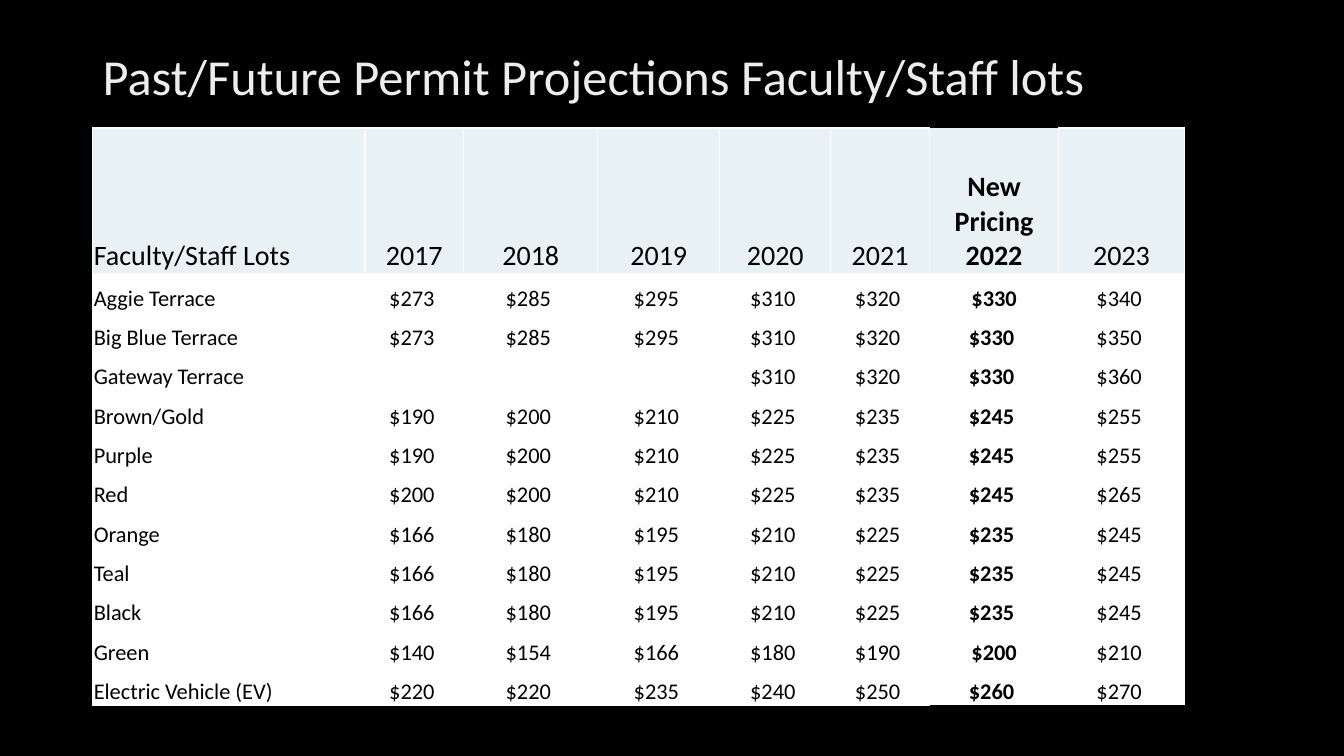
from typing import Any, NamedTuple

from lxml.etree import SubElement
from pptx import Presentation
from pptx.dml.color import RGBColor
from pptx.enum.text import MSO_ANCHOR as ANCHOR, PP_ALIGN as ALIGN
from pptx.oxml import parse_xml
from pptx.oxml.ns import nsdecls, qn
from pptx.util import Inches, Pt

FONT = "Calibri"
BLACK, WHITE, HEADER_FILL = "000000", "FFFFFF", "E8F2F4"
TITLE_STOPS = [(0, "BFBFBF"), (28, "EDEDED"), (100, "FFFFFF")]
TITLE_ANGLE = 80
NO_STYLE_NO_GRID = "{2D5ABB26-0587-4C30-8999-92F81FD0307C}"
CELL_FORMAT = {
    "margin_left": Inches(0.01), "margin_right": Inches(0.01),
    "margin_top": Inches(0.01), "margin_bottom": 0,
    "vertical_anchor": ANCHOR.BOTTOM,
}


class Column(NamedTuple):
    heading: str
    width: float
    bold: bool = False


class Lot(NamedTuple):
    name: str
    prices: list[int | None]


COLUMNS = [
    Column("Faculty/Staff Lots", 2.7),
    Column("2017", 0.98),
    Column("2018", 1.33),
    Column("2019", 1.21),
    Column("2020", 1.1),
    Column("2021", 0.98),
    Column("New Pricing\n2022", 1.28, bold=True),
    Column("2023", 1.25),
]
LOTS = [
    Lot("Aggie Terrace", [273, 285, 295, 310, 320, 330, 340]),
    Lot("Big Blue Terrace", [273, 285, 295, 310, 320, 330, 350]),
    Lot("Gateway Terrace", [None, None, None, 310, 320, 330, 360]),
    Lot("Brown/Gold", [190, 200, 210, 225, 235, 245, 255]),
    Lot("Purple", [190, 200, 210, 225, 235, 245, 255]),
    Lot("Red", [200, 200, 210, 225, 235, 245, 265]),
    Lot("Orange", [166, 180, 195, 210, 225, 235, 245]),
    Lot("Teal", [166, 180, 195, 210, 225, 235, 245]),
    Lot("Black", [166, 180, 195, 210, 225, 235, 245]),
    Lot("Green", [140, 154, 166, 180, 190, 200, 210]),
    Lot("Electric Vehicle (EV)", [220, 220, 235, 240, 250, 260, 270]),
]
NEW_PRICING, LAST_YEAR = 6, 7
UNPADDED = {("Aggie Terrace", NEW_PRICING), ("Green", NEW_PRICING)}


def rgb(value: str) -> RGBColor:
    return RGBColor.from_string(value)


def set_attrs(target: Any, values: dict[str, Any]) -> None:
    for name, value in values.items():
        setattr(target, name, value)


def add_title(slide: Any, text: str) -> None:
    sp = slide.shapes.add_textbox(Inches(0.92), Inches(0.4), Inches(11.5), Inches(0.77))
    tf = sp.text_frame
    set_attrs(tf, {"word_wrap": True, "vertical_anchor": ANCHOR.MIDDLE})
    p = tf.paragraphs[0]
    p.line_spacing = 0.9
    r = p.add_run()
    r.text = text
    set_attrs(r.font, {"size": Pt(36), "name": FONT})
    stops = "".join(
        f'<a:gs pos="{pos * 1000}"><a:srgbClr val="{color}"/></a:gs>'
        for pos, color in TITLE_STOPS
    )
    r.font._element.insert(0, parse_xml(
        f'<a:gradFill {nsdecls("a")}><a:gsLst>{stops}</a:gsLst>'
        f'<a:lin ang="{TITLE_ANGLE * 60000}" scaled="0"/></a:gradFill>'
    ))


def border_sides(row: int, col: int) -> str:
    """Sides with a white line; the last two columns are open lower down."""
    if col == NEW_PRICING:
        return "LRB" if row == 0 else "LRTB" if row < 4 else "LT" if row == 4 else "L"
    if col == LAST_YEAR and row > 0:
        return "LT" if row == 1 else "L" if row < 4 else ""
    return "LRTB"


def add_borders(cell: Any, sides: str) -> None:
    tc_pr = cell._tc.get_or_add_tcPr()
    for side in sides:
        ln = SubElement(tc_pr, qn(f"a:ln{side}"), w=str(Pt(1)))
        fill = SubElement(ln, qn("a:solidFill"))
        SubElement(fill, qn("a:srgbClr"), val=WHITE)


def fill_cell(cell: Any, text: str, row: int, col: int) -> None:
    set_attrs(cell, CELL_FORMAT)
    add_borders(cell, border_sides(row, col))
    cell.fill.solid()
    cell.fill.fore_color.rgb = rgb(WHITE if row else HEADER_FILL)
    cell.text = text
    for p in cell.text_frame.paragraphs:
        p.alignment = ALIGN.CENTER if col else ALIGN.LEFT
        for r in p.runs:
            set_attrs(r.font, {
                "size": Pt(16 if row else 20),
                "name": FONT,
                "bold": COLUMNS[col].bold,
            })
            r.font.color.rgb = rgb(BLACK)


def price_text(lot: Lot, col: int) -> str:
    price = lot.prices[col - 1]
    if price is None:
        return ""
    return f"${price}" if (lot.name, col) in UNPADDED else f"${price} "


def add_price_table(slide: Any) -> None:
    rows = [[c.heading for c in COLUMNS]]
    rows += [[lot.name] + [price_text(lot, col) for col in range(1, len(COLUMNS))]
             for lot in LOTS]
    frame = slide.shapes.add_table(len(rows), len(COLUMNS), Inches(0.92), Inches(1.27),
                                   Inches(10.84), Inches(5.77))
    table = frame.table
    set_attrs(table, {"first_row": False, "horz_banding": False})
    table._tbl.tblPr.find(qn("a:tableStyleId")).text = NO_STYLE_NO_GRID
    for col, column in enumerate(COLUMNS):
        table.columns[col].width = Inches(column.width)
    for row, texts in enumerate(rows):
        table.rows[row].height = Inches(0.39 if row else 1.44)
        for col, text in enumerate(texts):
            fill_cell(table.cell(row, col), text, row, col)


def main() -> None:
    prs = Presentation()
    set_attrs(prs, {"slide_width": Inches(13.33), "slide_height": Inches(7.5)})
    s = prs.slides.add_slide(prs.slide_layouts[6])

    # Background
    s.background.fill.solid()
    s.background.fill.fore_color.rgb = rgb(BLACK)

    # Title and permit prices
    add_title(s, "Past/Future Permit Projections Faculty/Staff lots")
    add_price_table(s)
    prs.save("out.pptx")


if __name__ == "__main__":
    main()
